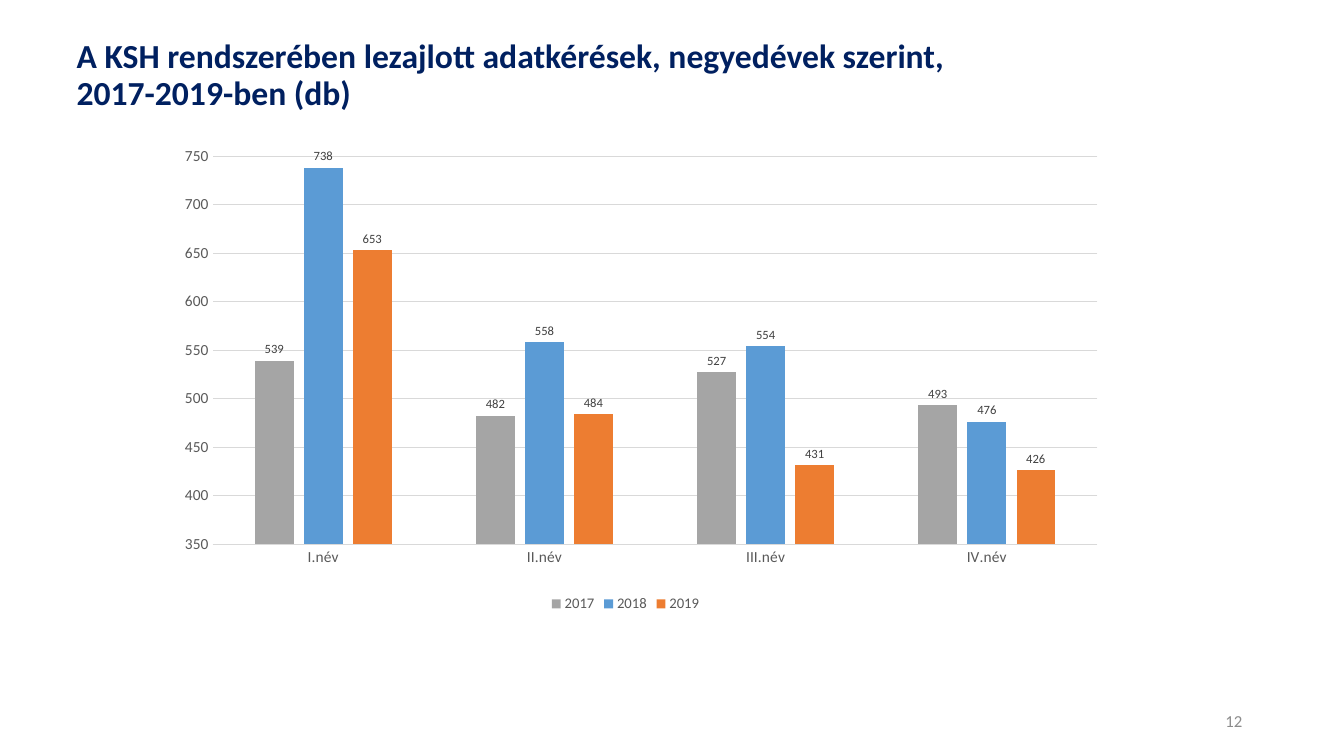
from lxml import etree
from pptx import Presentation
from pptx.chart.data import CategoryChartData
from pptx.dml.color import RGBColor
from pptx.enum.chart import XL_CHART_TYPE, XL_LABEL_POSITION, XL_LEGEND_POSITION, XL_TICK_MARK
from pptx.enum.text import MSO_ANCHOR, PP_ALIGN
from pptx.oxml.ns import qn
from pptx.util import Inches, Pt

TITLE = "A KSH rendszerében lezajlott adatkérések, negyedévek szerint,\v2017-2019-ben (db)"
PAGE_NUMBER = "12"
FONT = "Calibri"

NAVY = RGBColor(0x00, 0x20, 0x60)
NUMBER_GRAY = RGBColor(0x8C, 0x8C, 0x8C)
AXIS_GRAY = RGBColor(0x59, 0x59, 0x59)
LABEL_GRAY = RGBColor(0x40, 0x40, 0x40)
GRID_GRAY = RGBColor(0xD9, 0xD9, 0xD9)
SILVER = RGBColor(0xA5, 0xA5, 0xA5)
BLUE = RGBColor(0x5B, 0x9B, 0xD5)
ORANGE = RGBColor(0xED, 0x7D, 0x31)

QUARTERS = ["I.név", "II.név", "III.név", "IV.név"]
YEARS = [
    ("2017", SILVER, (539, 482, 527, 493)),
    ("2018", BLUE, (738, 558, 554, 476)),
    ("2019", ORANGE, (653, 484, 431, 426)),
]
PLOT_LAYOUT = [
    ("layoutTarget", "inner"), ("xMode", "edge"), ("yMode", "edge"),
    ("x", "0.08"), ("y", "0.05"), ("w", "0.9"), ("h", "0.8"),
]

CLUSTERED = XL_CHART_TYPE.COLUMN_CLUSTERED
OUTSIDE_END = XL_LABEL_POSITION.OUTSIDE_END
BOTTOM = XL_LEGEND_POSITION.BOTTOM
NO_TICK = XL_TICK_MARK.NONE
MIDDLE = MSO_ANCHOR.MIDDLE
RIGHT = PP_ALIGN.RIGHT


def style_font(font, size, color, bold=False):
    """Apply the slide's typeface with a size, colour and weight."""
    font.name = FONT
    font.size = Pt(size)
    font.bold = bold
    font.color.rgb = color


def style_line(line):
    """Draw a thin light gray line."""
    line.color.rgb = GRID_GRAY
    line.width = Pt(0.75)


def place(box, left, top, width, height):
    """Set the position and size of a box."""
    box.left, box.top = Inches(left), Inches(top)
    box.width, box.height = Inches(width), Inches(height)


def add_title(page):
    """Fill and format the title placeholder."""
    title = page.shapes.title
    place(title, 0.66, 0.2, 11.5, 1.11)
    title.text_frame.text = TITLE
    title.text_frame.vertical_anchor = MIDDLE
    para = title.text_frame.paragraphs[0]
    para.alignment = PP_ALIGN.LEFT
    para.line_spacing = 0.9
    style_font(para.font, 24, NAVY, bold=True)


def add_page_number(page):
    """Write the page number at the lower right."""
    box = page.shapes.add_textbox(Inches(9.42), Inches(6.95), Inches(3), Inches(0.4))
    frame = box.text_frame
    frame.word_wrap = True
    frame.vertical_anchor = MIDDLE
    frame.text = PAGE_NUMBER
    para = frame.paragraphs[0]
    para.alignment = RIGHT
    style_font(para.font, 12, NUMBER_GRAY)


def set_plot_layout(chart):
    """Fix the inner plot area within the chart."""
    area = chart.plots[0]._element.getparent()
    for old in area.findall(qn("c:layout")):
        area.remove(old)
    layout = etree.Element(qn("c:layout"))
    manual = etree.SubElement(layout, qn("c:manualLayout"))
    for name, value in PLOT_LAYOUT:
        etree.SubElement(manual, qn(f"c:{name}")).set("val", value)
    area.insert(0, layout)


def add_quarter_chart(page):
    """Add the clustered columns by quarter and year."""
    data = CategoryChartData()
    data.categories = QUARTERS
    for year, _, counts in YEARS:
        data.add_series(year, counts)
    chart = page.shapes.add_chart(
        CLUSTERED, Inches(1.33), Inches(1.31), Inches(9.75), Inches(4.81), data
    ).chart
    chart.has_title = False
    chart.font.name = FONT
    chart.font.size = Pt(10)
    chart.has_legend = True
    chart.legend.position = BOTTOM
    chart.legend.include_in_layout = False
    style_font(chart.legend.font, 10.5, AXIS_GRAY)

    for axis in (chart.category_axis, chart.value_axis):
        axis.major_tick_mark = axis.minor_tick_mark = NO_TICK
        style_font(axis.tick_labels.font, 11, AXIS_GRAY)
    style_line(chart.category_axis.format.line)
    values = chart.value_axis
    values.minimum_scale, values.maximum_scale, values.major_unit = 350, 750, 50
    values.format.line.fill.background()
    values.has_major_gridlines = True
    style_line(values.major_gridlines.format.line)

    plot = chart.plots[0]
    plot.gap_width, plot.overlap = 219, -27
    plot.vary_by_categories = False
    for series, (_, color, _) in zip(plot.series, YEARS):
        series.format.fill.solid()
        series.format.fill.fore_color.rgb = color
        labels = series.data_labels
        labels.show_value = True
        labels.position = OUTSIDE_END
        style_font(labels.font, 9, LABEL_GRAY)
    set_plot_layout(chart)


def main():
    """Build the slide and save it."""
    deck = Presentation()
    deck.slide_width, deck.slide_height = Inches(13.33), Inches(7.5)
    page = deck.slides.add_slide(deck.slide_layouts[5])
    add_page_number(page)
    add_title(page)
    add_quarter_chart(page)
    deck.save("out.pptx")


if __name__ == "__main__":
    main()
